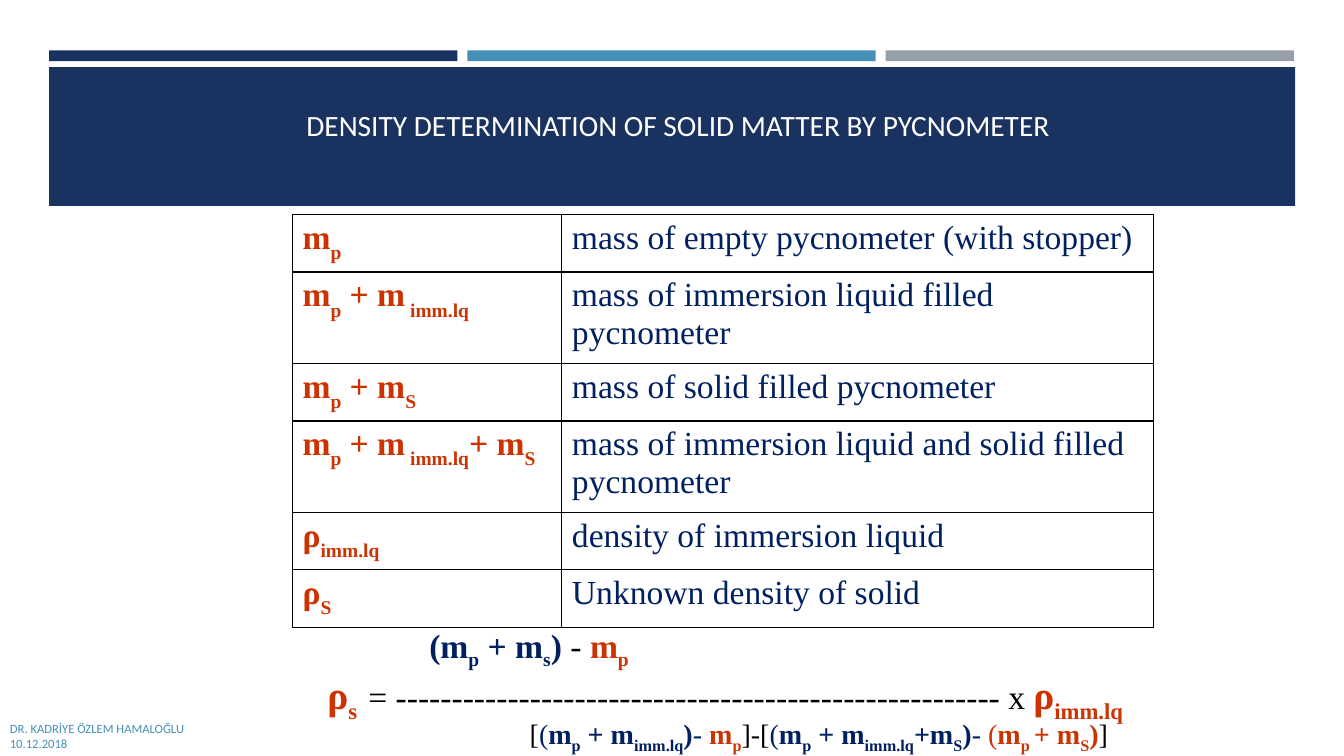
from lxml import etree
from pptx import Presentation
from pptx.dml.color import RGBColor
from pptx.enum.shapes import MSO_SHAPE
from pptx.enum.text import MSO_ANCHOR, PP_ALIGN
from pptx.oxml.ns import qn
from pptx.util import Cm, Pt

RECT = MSO_SHAPE.RECTANGLE
CENTER = PP_ALIGN.CENTER
BOTTOM, MIDDLE = MSO_ANCHOR.BOTTOM, MSO_ANCHOR.MIDDLE
NAVY, BLUE, GRAY = "1A3260", "4590B8", "969FA7"
RED, INK, BLACK, WHITE = "CC3300", "002060", "000000", "FFFFFF"
SERIF, SANS = "Times New Roman", "Calibri"


def color(code):
    return RGBColor.from_string(code)


def write(par, text, size, code, bold=False, drop=-25):
    """Add text to a paragraph; parts between underscores are subscripts."""
    for i, part in enumerate(text.split("_")):
        if part:
            run = par.add_run()
            run.text = part
            run.font.size = Pt(size)
            run.font.bold = bold
            run.font.color.rgb = color(code)
            if i % 2:
                run._r.get_or_add_rPr().set("baseline", str(drop * 1000))


deck = Presentation()
deck.slide_width, deck.slide_height = Cm(33.87), Cm(19.05)
slide = deck.slides.add_slide(deck.slide_layouts[6])
shapes = slide.shapes

# Top bars and title band
bars = [(1.24 + i * 10.54, 1.27, 10.29, 0.27, code)
        for i, code in enumerate((NAVY, BLUE, GRAY))]
for left, top, width, height, code in bars + [(1.24, 1.69, 31.4, 3.5, NAVY)]:
    bar = shapes.add_shape(RECT, Cm(left), Cm(top), Cm(width), Cm(height))
    bar.shadow.inherit = False
    bar.fill.solid()
    bar.fill.fore_color.rgb = color(code)
    bar.line.fill.background()

# Title and footer
labels = [
    (5.84, 2.82, 22.5, 0.84, BOTTOM, CENTER, 0.6, 21, WHITE,
     ["DENSITY DETERMINATION OF SOLID MATTER BY PYCNOMETER"]),
    (0, 18.03, 19.2, 1.02, MIDDLE, None, None, 9, BLUE,
     ["DR. KADRİYE ÖZLEM HAMALOĞLU", "10.12.2018"]),
]
for left, top, width, height, anchor, align, space, size, code, lines in labels:
    box = shapes.add_textbox(Cm(left), Cm(top), Cm(width), Cm(height))
    frame = box.text_frame
    frame.word_wrap = True
    frame.vertical_anchor = anchor
    for i, line in enumerate(lines):
        par = frame.add_paragraph() if i else frame.paragraphs[0]
        par.alignment = align
        par.line_spacing = space
        par.font.name = SANS
        write(par, line, size, code)

# Table of symbols
rows = [
    ("m_p_", ["mass of empty pycnometer (with stopper)"]),
    ("m_p_ + m_ imm.lq_", ["mass of immersion liquid filled", "pycnometer"]),
    ("m_p_ + m_S_", ["mass of solid filled pycnometer"]),
    ("m_p_ + m_ imm.lq_+ m_S_",
     ["mass of immersion liquid and solid filled", "pycnometer"]),
    ("ρ_imm.lq_", ["density of immersion liquid"]),
    ("ρ_S_", ["Unknown density of solid"]),
]
table = shapes.add_table(len(rows), 2, Cm(7.37), Cm(5.4),
                         Cm(21.7), Cm(10.4)).table
table.first_row = table.horz_banding = False
table.columns[0].width, table.columns[1].width = Cm(6.79), Cm(14.91)
for r, (sign, lines) in enumerate(rows):
    table.rows[r].height = Cm(1.45 if len(lines) == 1 else 2.3)
    for c, parts in enumerate(([sign], lines)):
        cell = table.cell(r, c)
        props = cell._tc.get_or_add_tcPr()
        for side in ("a:lnL", "a:lnR", "a:lnT", "a:lnB"):
            edge = etree.SubElement(props, qn(side), w=str(Pt(1)))
            fill = etree.SubElement(edge, qn("a:solidFill"))
            etree.SubElement(fill, qn("a:srgbClr"), val=BLACK)
        cell.fill.background()
        for i, part in enumerate(parts):
            frame = cell.text_frame
            par = frame.add_paragraph() if i else frame.paragraphs[0]
            par.font.name = SERIF
            write(par, part, 24, INK if c else RED, c == 0, -30)

# Formula: indent, space before, runs of (text, size, color, bold)
formula = [
    (2.57, 5, [("(m_p_ + m_s_) ", 24, INK, True), ("- ", 24, BLACK, False),
               ("m_p_", 24, RED, True), (" ", 32, BLACK, False)]),
    (0, 5, [("ρ_s_", 28, RED, True), (" ", 32, BLACK, False),
            ("= " + "-" * 54 + " x ", 24, BLACK, False),
            ("ρ_imm.lq_", 28, RED, True)]),
    (5.1, 0, [("[", 20, BLACK, False), ("(", 20, INK, False),
              ("m_p_ + m_imm.lq_)", 20, INK, True), ("- ", 20, INK, False),
              ("m_p_", 20, RED, True), ("]-[", 20, BLACK, False),
              ("(", 20, INK, False),
              ("m_p_ + m_imm.lq_+m_S_)", 20, INK, True),
              ("- ", 20, INK, False), ("(", 20, RED, False),
              ("m_p _+ m_S_)", 20, RED, True), ("]", 20, BLACK, False),
              (" ", 24, BLACK, False)]),
]
box = shapes.add_textbox(Cm(8), Cm(15.6), Cm(21.51), Cm(3.71))
frame = box.text_frame
frame.word_wrap = True
frame.margin_bottom = 0
for i, (indent, gap, runs) in enumerate(formula):
    par = frame.add_paragraph() if i else frame.paragraphs[0]
    par._p.get_or_add_pPr().set("marL", str(Cm(indent)))
    par.line_spacing = 0.75
    par.space_before = Pt(gap)
    par.font.name = SERIF
    for run in runs:
        write(par, *run)

deck.save("out.pptx")
